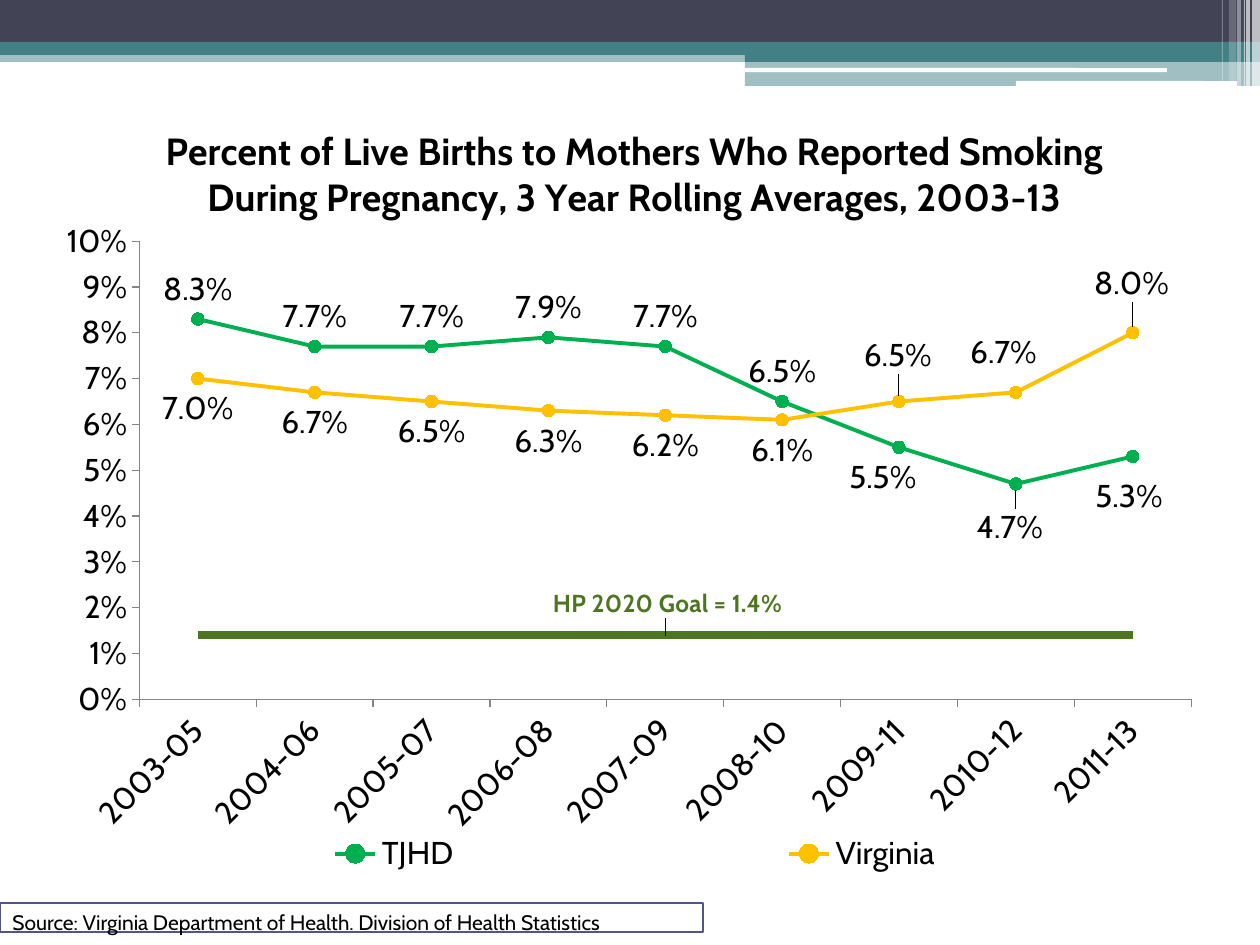
"""Build the slide on smoking during pregnancy with its three-line chart."""
import copy
import dataclasses

import pptx
import pptx.chart.data
import pptx.dml.color
import pptx.enum.chart
import pptx.enum.shapes
import pptx.enum.text
import pptx.oxml
import pptx.oxml.ns
import pptx.util

EMU_PER_PX = 914400 / 126
CHART_W, CHART_H = 1250, 808


@dataclasses.dataclass(frozen=True)
class Theme:
    font: str = "Cabin"
    text: str = "000000"
    white: str = "FFFFFF"
    dark: str = "424456"
    teal: str = "438086"
    border: str = "53548A"
    axis: str = "868686"
    tjhd: str = "00B050"
    virginia: str = "FFC000"
    goal: str = "4D7620"
    title_pt: float = 21.6
    body_pt: int = 18
    goal_pt: int = 14
    source_pt: int = 12


theme = Theme()
rgb = pptx.dml.color.RGBColor.from_string
qn = pptx.oxml.ns.qn
ns = pptx.oxml.ns.nsdecls
Pt = pptx.util.Pt
SHAPE = pptx.enum.shapes.MSO_SHAPE
LABEL = pptx.enum.chart.XL_LABEL_POSITION


def px(*values):
    return [pptx.util.Emu(round(v * EMU_PER_PX)) for v in values]


def place(parent, index, **values):
    for old in parent.findall(qn("c:layout")):
        parent.remove(old)
    items = "".join(f'<c:{key} val="{value}"/>' for key, value in values.items())
    parent.insert(index, pptx.oxml.parse_xml(
        f'<c:layout {ns("c")}><c:manualLayout>{items}</c:manualLayout></c:layout>'))


prs = pptx.Presentation()
prs.slide_width, prs.slide_height = px(1260, 945)
s = prs.slides.add_slide(prs.slide_layouts[6])

bars = [
    (0, 50, 1260, 12, SHAPE.RECTANGLE, theme.teal, 50),
    (0, 0, 1260, 42, SHAPE.RECTANGLE, theme.dark, 100),
    (0, 42, 1260, 13, SHAPE.RECTANGLE, theme.teal, 100),
    (745, 49, 515, 13, SHAPE.RECTANGLE, theme.teal, 100),
    (745, 61, 515, 25, SHAPE.RECTANGLE, theme.teal, 50),
    (745, 68, 422, 4, SHAPE.ROUNDED_RECTANGLE, theme.white, 100),
    (1016, 81, 221, 5, SHAPE.ROUNDED_RECTANGLE, theme.white, 100),
    (1252, 0, 8, 86, SHAPE.RECTANGLE, theme.white, 65),
    (1246, 0, 4, 86, SHAPE.RECTANGLE, theme.white, 65),
    (1244, 0, 1, 86, SHAPE.RECTANGLE, theme.white, 60),
    (1237, 0, 4, 86, SHAPE.RECTANGLE, theme.white, 40),
    (1229, 0, 7, 81, SHAPE.RECTANGLE, theme.white, 20),
    (1222, 0, 1, 81, SHAPE.RECTANGLE, theme.white, 30),
]
for left, top, width, height, kind, color, opacity in bars:
    sp = s.shapes.add_shape(kind, *px(left, top, width, height))
    sp.shadow.inherit = False
    sp.line.fill.background()
    sp.fill.solid()
    sp.fill.fore_color.rgb = rgb(color)
    if opacity < 100:
        sp._element.spPr.find(".//" + qn("a:srgbClr")).append(
            pptx.oxml.parse_xml(f'<a:alpha {ns("a")} val="{opacity * 1000}"/>'))

sp = s.shapes.add_shape(SHAPE.RECTANGLE, *px(0, 903, 703, 29))
sp.shadow.inherit = False
sp.fill.solid()
sp.fill.fore_color.rgb = rgb(theme.white)
sp.line.color.rgb = rgb(theme.border)
sp.line.width = Pt(0.75)
tf = sp.text_frame
tf.vertical_anchor = pptx.enum.text.MSO_ANCHOR.TOP
p = tf.paragraphs[0]
p.text = "Source: Virginia Department of Health. Division of Health Statistics"
p.alignment = pptx.enum.text.PP_ALIGN.LEFT
p.font.name, p.font.size = theme.font, Pt(theme.source_pt)
p.font.color.rgb = rgb(theme.text)

data = pptx.chart.data.CategoryChartData(number_format="0.0%")
data.categories = [f"{year}-{year % 100 + 2:02d}" for year in range(2003, 2012)]
data.add_series("TJHD", [0.083, 0.077, 0.077, 0.079, 0.077, 0.065, 0.055, 0.047, 0.053])
data.add_series("Virginia", [0.07, 0.067, 0.065, 0.063, 0.062, 0.061, 0.065, 0.067, 0.08])
data.add_series("Series 3", [0.014] * 9)
chart = s.shapes.add_chart(pptx.enum.chart.XL_CHART_TYPE.LINE_MARKERS,
                           *px(10, 95, CHART_W, CHART_H), data).chart
chart.font.name, chart.font.size = theme.font, Pt(theme.body_pt)
chart.font.color.rgb = rgb(theme.text)

chart.has_title = True
p = chart.chart_title.text_frame.paragraphs[0]
p.text = ("Percent of Live Births to Mothers Who Reported Smoking "
          "During Pregnancy, 3 Year Rolling Averages, 2003-13")
p.font.name, p.font.size, p.font.bold = theme.font, Pt(theme.title_pt), True
p.font.color.rgb = rgb(theme.text)
place(chart.chart_title._element, 1, xMode="edge", yMode="edge", x=0.119, y=0.028)
plot_area = chart._chartSpace.chart.plotArea
place(plot_area, 0, layoutTarget="inner", xMode="edge",
      yMode="edge", x=0.1035, y=0.181, w=0.8415, h=0.567)

chart.has_legend = True
chart.legend.position = pptx.enum.chart.XL_LEGEND_POSITION.BOTTOM
chart.legend.include_in_layout = False
legend = chart.legend._element
legend.insert(1, pptx.oxml.parse_xml(
    f'<c:legendEntry {ns("c")}><c:idx val="2"/><c:delete val="1"/></c:legendEntry>'))
place(legend, 2, xMode="edge", yMode="edge", x=0, y=0.909, w=1, h=0.06)

for axis in (chart.category_axis, chart.value_axis):
    axis.has_major_gridlines = False
    axis.major_tick_mark = pptx.enum.chart.XL_TICK_MARK.OUTSIDE
    axis.format.line.color.rgb = rgb(theme.axis)
    axis.format.line.width = Pt(0.75)
    axis.tick_labels.font.size = Pt(theme.body_pt)
chart.category_axis._element.find(".//" + qn("a:bodyPr")).set("rot", "-2700000")
axis = chart.value_axis
axis.minimum_scale, axis.maximum_scale, axis.major_unit = 0, 0.1, 0.01
axis.tick_labels.number_format = "0%"
axis.tick_labels.number_format_is_linked = False

styles = [
    (theme.tjhd, 2.25, LABEL.ABOVE, LABEL.BELOW, {6: (-16, 0), 7: (-6, 14), 8: (-4, 10)}),
    (theme.virginia, 2.25, LABEL.BELOW, LABEL.ABOVE, {6: (-1, -16), 7: (-13, -10), 8: (-1, -19)}),
    (theme.goal, 4.5, LABEL.ABOVE, LABEL.ABOVE, {4: (2, -11)}),
]
for series, (color, weight, usual, moved, shifts) in zip(chart.plots[0].series, styles):
    is_goal = color == theme.goal
    series.smooth = False
    series.format.line.color.rgb = rgb(color)
    series.format.line.width = Pt(weight)
    marker = series.marker
    if is_goal:
        marker.style = pptx.enum.chart.XL_MARKER_STYLE.NONE
    else:
        marker.style = pptx.enum.chart.XL_MARKER_STYLE.CIRCLE
        marker.size = 7
        marker.format.fill.solid()
        marker.format.fill.fore_color.rgb = rgb(color)
        marker.format.line.color.rgb = rgb(color)
    labels = series.data_labels
    labels.show_value = not is_goal
    labels.number_format, labels.number_format_is_linked = "0.0%", False
    labels.position = usual
    for index in shifts:
        label = series.points[index].data_label
        if is_goal:
            r = label.text_frame.paragraphs[0].add_run()
            r.text = "HP 2020 Goal = 1.4%"
            r.font.name, r.font.size, r.font.bold = theme.font, Pt(theme.goal_pt), True
            r.font.color.rgb = rgb(color)
        label.position = moved
    for item, (dx, dy) in zip(series._element.iter(qn("c:dLbl")), shifts.values()):
        place(item, 1, x=round(dx / CHART_W, 3), y=round(dy / CHART_H, 3))
    group = series._element.find(qn("c:dLbls"))
    for old in group.findall(qn("c:showLeaderLines")):
        group.remove(old)
    group.append(pptx.oxml.parse_xml(
        f'<c:extLst {ns("c")}><c:ext uri="{{CE6537A1-D6FC-4f65-9D91-7224C49458BB}}" '
        'xmlns:c15="http://schemas.microsoft.com/office/drawing/2012/chart">'
        f'<c15:showLeaderLines val="{int(is_goal)}"/></c:ext></c:extLst>'))

main = plot_area.find(qn("c:lineChart"))
second = copy.deepcopy(main)
for ser in second.findall(qn("c:ser"))[:2]:
    second.remove(ser)
main.remove(main.findall(qn("c:ser"))[2])
main.addnext(second)
right_ids = {node.get("val"): str(5001 + i)
             for i, node in enumerate(main.findall(qn("c:axId")))}
for node in second.findall(qn("c:axId")):
    node.set("val", right_ids[node.get("val")])
for axis in (chart.value_axis, chart.category_axis):
    hidden = copy.deepcopy(axis._element)
    for tag in ("c:axId", "c:crossAx"):
        node = hidden.find(qn(tag))
        node.set("val", right_ids[node.get("val")])
    hidden.find(qn("c:delete")).set("val", "1")
    if axis is not chart.category_axis and hidden.tag == qn("c:valAx"):
        hidden.find(qn("c:axPos")).set("val", "r")
        hidden.find(qn("c:crosses")).set("val", "max")
        hidden.find(".//" + qn("c:max")).set("val", "0.5")
        hidden.find(qn("c:majorUnit")).set("val", "0.05")
    plot_area.findall(qn("c:valAx"))[-1].addnext(hidden)

prs.save("out.pptx")
